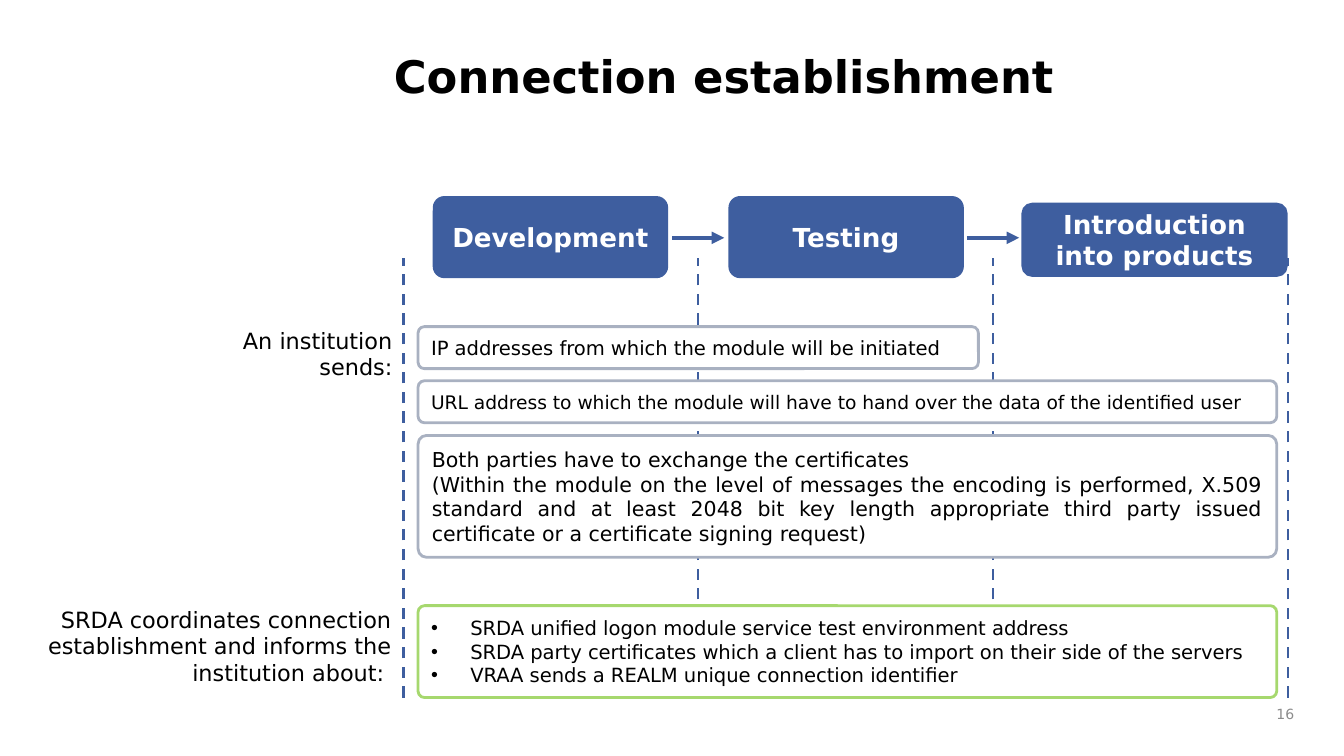
"""Build the connection establishment slide."""
from dataclasses import dataclass

from lxml import etree
from pptx import Presentation
from pptx import util as u
from pptx.dml.color import RGBColor
from pptx.enum import dml, shapes, text
from pptx.oxml import ns

FONT = "DejaVu Sans"
COLORS = {
    "blue": "3E5E9F",
    "grey": "A9B1C1",
    "green": "A6D86E",
    "white": "FFFFFF",
    "black": "000000",
    "number": "8C8C8C",
}
ALIGN = text.PP_ALIGN
ANCHOR = text.MSO_ANCHOR
COLUMN = 158
GUIDE_LEFT = 216
GUIDE_TOP, GUIDE_BOTTOM = 138.2, 373.7
ARROW_LEFT, ARROW_LENGTH, ARROW_Y = 360, 28, 127.4


@dataclass
class Box:
    left: float
    top: float
    width: float
    height: float


@dataclass
class Style:
    size: float
    color: str = "black"
    bold: bool = False
    align: ALIGN = ALIGN.LEFT
    anchor: ANCHOR = ANCHOR.TOP
    margins: tuple[float, float, float, float] = (7.2, 3.6, 7.2, 3.6)
    bullet: bool = False


@dataclass
class Panel:
    box: Box
    radius: float
    fill: str
    line: str
    lines: list[str]
    style: Style


def rgb(name: str) -> RGBColor:
    return RGBColor.from_string(COLORS[name])


def place(sp, box: Box) -> None:
    sp.left, sp.top = u.Pt(box.left), u.Pt(box.top)
    sp.width, sp.height = u.Pt(box.width), u.Pt(box.height)


def add_bullet(p) -> None:
    pPr = p._p.get_or_add_pPr()
    pPr.set("marL", str(u.Pt(21)))
    pPr.set("indent", str(u.Pt(-21)))
    etree.SubElement(pPr, ns.qn("a:buFont")).set("typeface", "Arial")
    etree.SubElement(pPr, ns.qn("a:buChar")).set("char", "•")


def write(tf, lines: list[str], style: Style) -> None:
    tf.text = "\n".join(lines)
    tf.word_wrap = True
    tf.auto_size = text.MSO_AUTO_SIZE.NONE
    tf.vertical_anchor = style.anchor
    tf.margin_left, tf.margin_top, tf.margin_right, tf.margin_bottom = map(u.Pt, style.margins)
    for p in tf.paragraphs:
        p.alignment = style.align
        if style.bullet:
            add_bullet(p)
        for r in p.runs:
            r.font.name, r.font.size, r.font.bold = FONT, u.Pt(style.size), style.bold
            r.font.color.rgb = rgb(style.color)


def add_label(s, box: Box, content: str, style: Style) -> None:
    sp = s.shapes.add_textbox(0, 0, 0, 0)
    place(sp, box)
    write(sp.text_frame, [content], style)


def add_panel(s, panel: Panel) -> None:
    sp = s.shapes.add_shape(shapes.MSO_SHAPE.ROUNDED_RECTANGLE, 0, 0, 0, 0)
    place(sp, panel.box)
    sp.adjustments[0] = panel.radius
    sp.shadow.inherit = False
    sp.fill.solid()
    sp.fill.fore_color.rgb = rgb(panel.fill)
    sp.line.color.rgb = rgb(panel.line)
    sp.line.width = u.Pt(1.5)
    write(sp.text_frame, panel.lines, panel.style)


def add_line(s, start: tuple[float, float], end: tuple[float, float], width: float,
             dashed: bool = False, arrow: bool = False) -> None:
    ends = [u.Pt(v) for v in (*start, *end)]
    sp = s.shapes.add_connector(shapes.MSO_CONNECTOR.STRAIGHT, *ends)
    sp.line.color.rgb = rgb("blue")
    sp.line.width = u.Pt(width)
    if dashed:
        sp.line.dash_style = dml.MSO_LINE.DASH
    if arrow:
        etree.SubElement(sp.line._get_or_add_ln(), ns.qn("a:tailEnd")).set("type", "triangle")
    etree.SubElement(sp._element.spPr, ns.qn("a:effectLst"))


def body(size: float, bullet: bool = False) -> Style:
    return Style(size, align=ALIGN.JUSTIFY, anchor=ANCHOR.MIDDLE, margins=(6, 6, 6, 6), bullet=bullet)


STAGE = Style(14, "white", True, ALIGN.CENTER, ANCHOR.MIDDLE, (3.6, 0, 3.6, 0))
SIDE = Style(12, align=ALIGN.RIGHT, margins=(0, 0, 0, 3.6))
STAGES = [
    ("Development", Box(232.6, 105.8, 124.6, 42.5)),
    ("Testing", Box(391, 105.8, 124.6, 42.5)),
    ("Introduction into products", Box(548, 109.4, 141.1, 38.2)),
]
PANELS = [
    Panel(Box(224, 175, 300.2, 22.5), 0.15, "white", "grey",
          ["IP addresses from which the module will be initiated"], body(10.5)),
    Panel(Box(224, 204, 460, 22.5), 0.15, "white", "grey",
          ["URL address to which the module will have to hand over the data of the identified user"],
          body(10)),
    Panel(Box(224, 233.3, 460, 65.3), 0.07, "white", "grey",
          ["Both parties have to exchange the certificates ",
           "(Within the module on the level of messages the encoding is performed, X.509 standard "
           "and at least 2048 bit key length appropriate third party issued certificate or a "
           "certificate signing request) "], body(11)),
    Panel(Box(224, 324.5, 460, 49.2), 0.07, "white", "green",
          ["SRDA unified logon module service test environment address",
           "SRDA party certificates which a client has to import on their side of the servers",
           "VRAA sends a REALM unique connection identifier"], body(10.5, bullet=True)),
]
LABELS = [
    (Box(99.4, 175, 110.9, 32), "An institution sends:", SIDE),
    (Box(5.8, 324.5, 204, 46), "SRDA coordinates connection establishment and informs the "
     "institution about: ", SIDE),
    (Box(671.8, 373.7, 23.8, 18), "16", Style(7.5, "number", align=ALIGN.RIGHT, anchor=ANCHOR.MIDDLE,
                                              margins=(0, 3.6, 2.2, 3.6))),
]


def main() -> None:
    prs = Presentation()
    prs.slide_width, prs.slide_height = u.Pt(720), u.Pt(405)
    s = prs.slides.add_slide(prs.slide_layouts[5])
    place(s.shapes.title, Box(203.8, 22.3, 480.2, 61.2))
    write(s.shapes.title.text_frame, ["Connection establishment"], Style(24, bold=True))
    for name, box in STAGES:
        add_panel(s, Panel(box, 0.13, "blue", "blue", [name], STAGE))
    for i in range(4):
        x = GUIDE_LEFT + i * COLUMN
        add_line(s, (x, GUIDE_BOTTOM), (x, GUIDE_TOP), 1.5, dashed=True)
    for i in range(2):
        x = ARROW_LEFT + i * COLUMN
        add_line(s, (x, ARROW_Y), (x + ARROW_LENGTH, ARROW_Y), 2.25, arrow=True)
    for panel in PANELS:
        add_panel(s, panel)
    for box, content, style in LABELS:
        add_label(s, box, content, style)
    prs.save("out.pptx")


if __name__ == "__main__":
    main()
